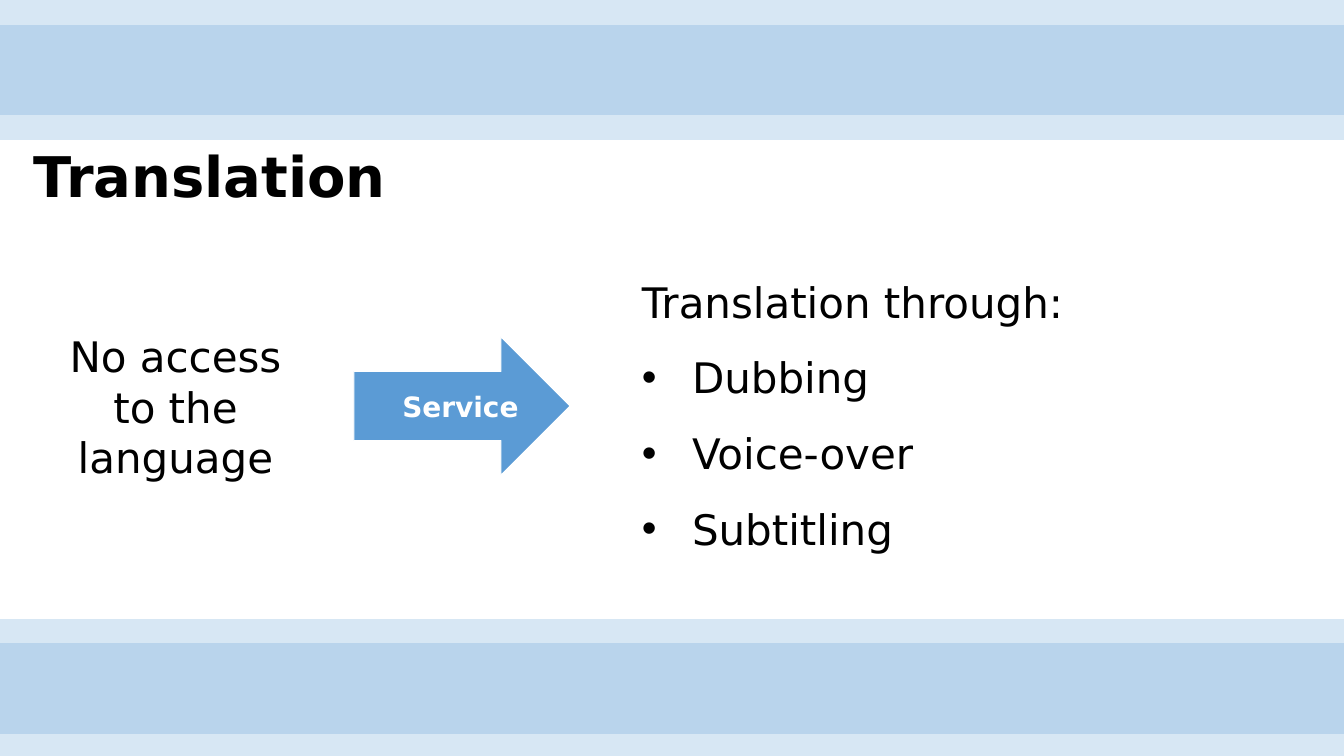
from lxml import etree
from pptx import Presentation
from pptx.dml.color import RGBColor
from pptx.enum.shapes import MSO_SHAPE
from pptx.enum.text import MSO_ANCHOR, MSO_AUTO_SIZE, PP_ALIGN
from pptx.oxml.ns import qn
from pptx.util import Pt

PX = 914400 / 67.2
BLUE = RGBColor(0x5B, 0x9B, 0xD5)
BLACK = RGBColor(0, 0, 0)
WHITE = RGBColor(0xFF, 0xFF, 0xFF)
FONT = "DejaVu Sans"
LEFT, CENTER = PP_ALIGN.LEFT, PP_ALIGN.CENTER
TOP, MIDDLE = MSO_ANCHOR.TOP, MSO_ANCHOR.MIDDLE
RECTANGLE, RIGHT_ARROW = MSO_SHAPE.RECTANGLE, MSO_SHAPE.RIGHT_ARROW
NO_AUTOFIT = MSO_AUTO_SIZE.NONE


def px(*lengths):
    return [round(length * PX) for length in lengths]


def write(shape, box, insets, lines, size, color, bold, align, anchor, spacing):
    shape.left, shape.top, shape.width, shape.height = px(*box)
    frame = shape.text_frame
    frame.word_wrap = True
    frame.auto_size = NO_AUTOFIT
    frame.vertical_anchor = anchor
    frame.margin_left = frame.margin_right = px(insets[0])[0]
    frame.margin_top = frame.margin_bottom = px(insets[1])[0]
    for index, line in enumerate(lines):
        paragraph = frame.add_paragraph() if index else frame.paragraphs[0]
        paragraph.alignment = align
        paragraph.line_spacing = spacing
        paragraph.space_before = Pt(0)
        run = paragraph.add_run()
        run.text = line
        run.font.name = FONT
        run.font.size = Pt(size)
        run.font.bold = bold
        run.font.color.rgb = color


presentation = Presentation()
presentation.slide_width, presentation.slide_height = px(1344, 756)
slide = presentation.slides.add_slide(presentation.slide_layouts[1])
shapes = slide.shapes
title, body = slide.placeholders

# Overlapping translucent bands along the top and bottom
for top in (643, 619, 0, 25):
    band = shapes.add_shape(RECTANGLE, *px(0, top, 1344, 115))
    band.shadow.inherit = False
    band.fill.solid()
    band.fill.fore_color.rgb = BLUE
    band.line.fill.background()
    color_element = band._element.spPr.find(qn("a:solidFill"))[0]
    etree.SubElement(color_element, qn("a:alpha"), val="24000")

# Title
write(title, (24, 140, 894, 78), (10, 5), ["Translation"],
      60, BLACK, True, LEFT, MIDDLE, 0.9)

# List of translation methods under an unbulleted lead-in
write(body, (632, 246, 506, 305), (10, 5),
      ["Translation through:", "Dubbing", "Voice-over", "Subtitling"],
      45, BLACK, False, LEFT, TOP, 1.5)
for index, paragraph in enumerate(body.text_frame.paragraphs):
    properties = paragraph._p.get_or_add_pPr()
    indent = px(50)[0] if index else 0
    properties.set("marL", str(indent))
    properties.set("indent", str(-indent))
    if index:
        etree.SubElement(properties, qn("a:buFont"), typeface="Arial")
        etree.SubElement(properties, qn("a:buChar"), char="•")
    else:
        etree.SubElement(properties, qn("a:buNone"))

# Problem statement
problem = shapes.add_textbox(0, 0, 0, 0)
write(problem, (29, 328, 293, 159), (7, 3), ["No access", "to the language"],
      45, BLACK, False, CENTER, TOP, 1.0)

# Arrow with its label
service = shapes.add_group_shape()
arrow = service.shapes.add_shape(RIGHT_ARROW, *px(354, 337, 216, 138))
arrow.shadow.inherit = False
arrow.fill.solid()
arrow.fill.fore_color.rgb = BLUE
arrow.line.color.rgb = WHITE
arrow.line.width = Pt(1)
label = service.shapes.add_textbox(*px(372, 374, 177, 69))
write(label, (372, 374, 177, 69), (0, 22), ["Service"],
      30, WHITE, True, CENTER, MIDDLE, 0.9)

presentation.save("out.pptx")
